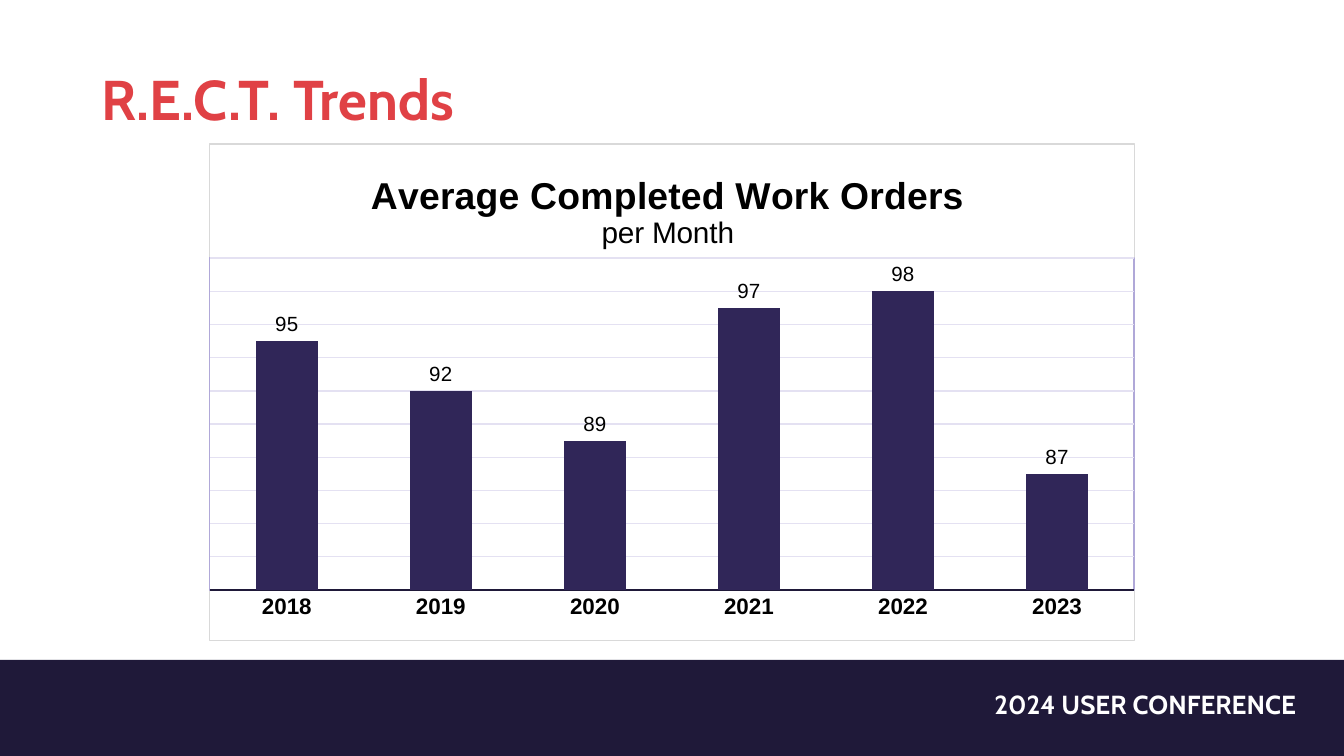
from lxml import etree
from pptx import Presentation
from pptx.chart.data import CategoryChartData
from pptx.dml.color import RGBColor
from pptx.enum import chart as kinds, shapes, text
from pptx.oxml import parse_xml
from pptx.oxml.ns import nsdecls, qn
from pptx.util import Pt

NAVY, RED, BLACK = "1F1939", "E04145", "000000"


def color(code):
    return RGBColor.from_string(code)


def style(font, name, size, code, bold=False):
    values = {"name": name, "size": Pt(size), "bold": bold}
    for key, value in values.items():
        setattr(font, key, value)
    font.color.rgb = color(code)


deck = Presentation()
deck.slide_width, deck.slide_height = Pt(720), Pt(405)
slide = deck.slides.add_slide(deck.slide_layouts[5])

# Footer band
band = slide.shapes.add_shape(
    shapes.MSO_SHAPE.RECTANGLE, Pt(0), Pt(353.5), Pt(720), Pt(51.5))
band.shadow.inherit = False
band.fill.solid()
band.fill.fore_color.rgb = color(NAVY)
band.line.fill.background()

label = slide.shapes.add_textbox(Pt(348), Pt(365), Pt(353.5), Pt(35))
label.text_frame.word_wrap = True
line = label.text_frame.paragraphs[0]
line.alignment = text.PP_ALIGN.RIGHT
run = line.add_run()
run.text = "2024 USER CONFERENCE"
style(run.font, "Cabin", 14, "FFFFFF", True)

# Slide title
title = slide.shapes.title
box = {"left": 47, "top": 27.4, "width": 613.5, "height": 44.6}
for key, value in box.items():
    setattr(title, key, Pt(value))
frame = title.text_frame
for side in ("left", "top", "right", "bottom"):
    setattr(frame, "margin_" + side, Pt(7.2))
frame.vertical_anchor = text.MSO_ANCHOR.TOP
frame.auto_size = text.MSO_AUTO_SIZE.NONE
frame.text = "R.E.C.T. Trends"
line = frame.paragraphs[0]
line.alignment = text.PP_ALIGN.LEFT
style(line.runs[0].font, "Cabin", 30, RED, True)

# Column chart
data = CategoryChartData(number_format="0")
data.categories = ["2018", "2019", "2020", "2021", "2022", "2023"]
data.add_series("Series 1", [95, 92, 89, 97, 98, 87])
chart = slide.shapes.add_chart(
    kinds.XL_CHART_TYPE.COLUMN_CLUSTERED,
    Pt(112), Pt(76.7), Pt(496), Pt(267), data).chart
style(chart.font, "Arial", 10, BLACK)
chart.has_legend = False

chart.has_title = True
head = chart.chart_title.text_frame
for index, (words, size, bold) in enumerate(
        [("Average Completed Work Orders", 20, True), ("per Month", 16, False)]):
    line = head.add_paragraph() if index else head.paragraphs[0]
    run = line.add_run()
    run.text = words
    style(run.font, "Arial", size, BLACK, bold)

plot = chart.plots[0]
plot.gap_width, plot.overlap = 150, -25
plot.vary_by_categories = False
bars = plot.series[0]
bars.format.fill.solid()
bars.format.fill.fore_color.rgb = color("302658")
labels = bars.data_labels
labels.show_value = True
labels.number_format, labels.number_format_is_linked = "#,##0", False
labels.position = kinds.XL_LABEL_POSITION.OUTSIDE_END
style(labels.font, "Arial", 11, BLACK)

years, scale = chart.category_axis, chart.value_axis
years.major_tick_mark = kinds.XL_TICK_MARK.NONE
style(years.tick_labels.font, "Arial", 12, BLACK, True)
limits = {"minimum_scale": 80, "maximum_scale": 100, "major_unit": 2,
          "has_major_gridlines": True, "visible": False}
for key, value in limits.items():
    setattr(scale, key, value)
for edge, code in ((years.format.line, NAVY),
                   (scale.major_gridlines.format.line, "E4E1F2")):
    edge.width = Pt(0.75)
    edge.color.rgb = color(code)

# Manual layouts and borders
root = chart._chartSpace
area = root.chart.plotArea
spots = (
    (area, {"layoutTarget": "inner", "xMode": "edge", "yMode": "edge",
            "x": 0, "y": 0.23, "w": 1, "h": 0.668}),
    (root.chart.find(qn("c:title")),
     {"xMode": "edge", "yMode": "edge", "x": 0.17, "y": 0.05}),
)
for part, values in spots:
    for old in part.findall(qn("c:layout")):
        part.remove(old)
    layout = parse_xml(f"<c:layout {nsdecls('c')}><c:manualLayout/></c:layout>")
    for key, value in values.items():
        etree.SubElement(layout[0], qn("c:" + key)).set("val", str(value))
    part.insert(1 if part.find(qn("c:tx")) is not None else 0, layout)

for part, code in ((area, "B0A8D8"), (root, "D9D9D9")):
    border = parse_xml(
        f"<c:spPr {nsdecls('c', 'a')}><a:noFill/><a:ln w='9525'><a:solidFill>"
        f"<a:srgbClr val='{code}'/></a:solidFill></a:ln></c:spPr>")
    if part is root:
        root.chart.addnext(border)
    else:
        part.append(border)

deck.save("out.pptx")
